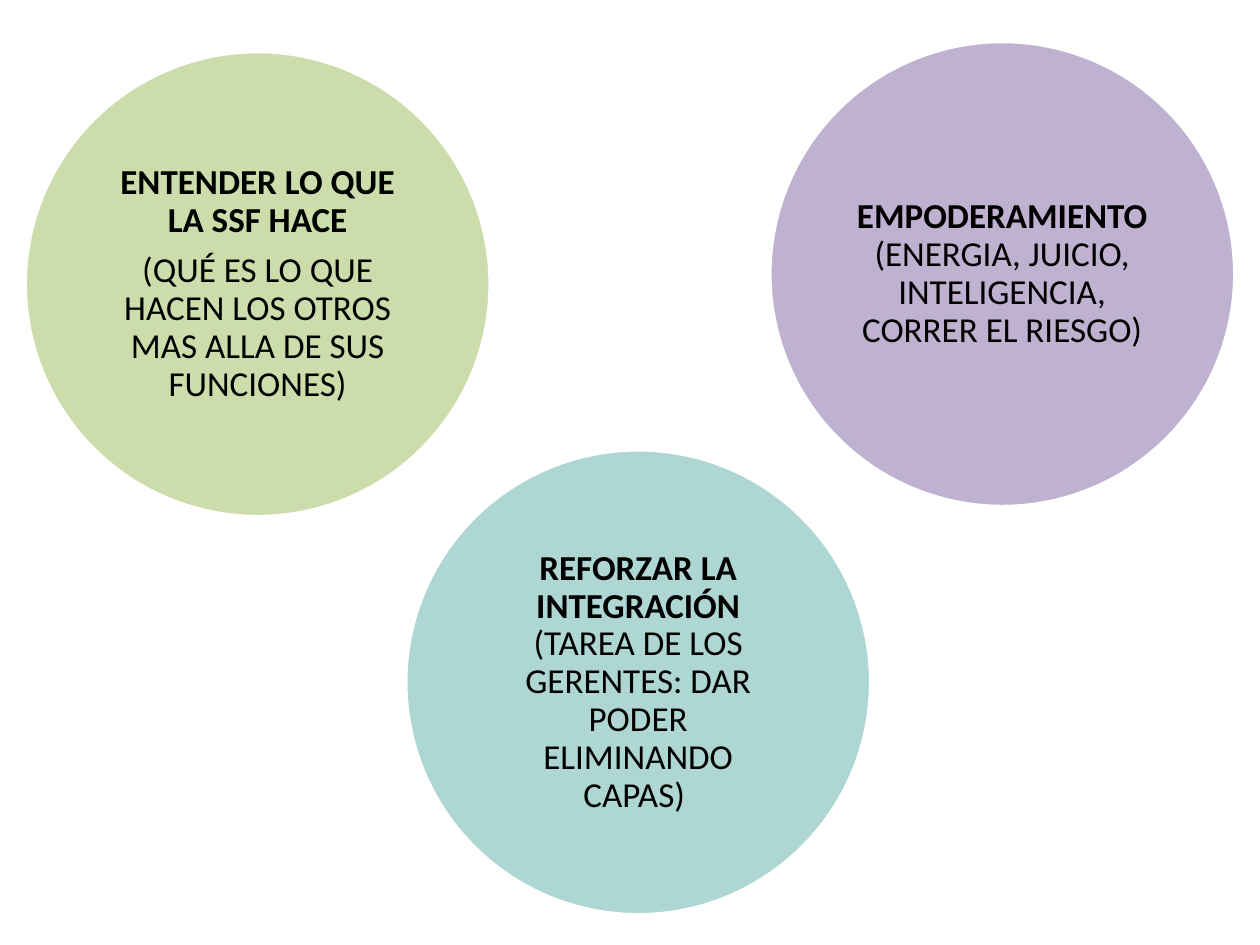
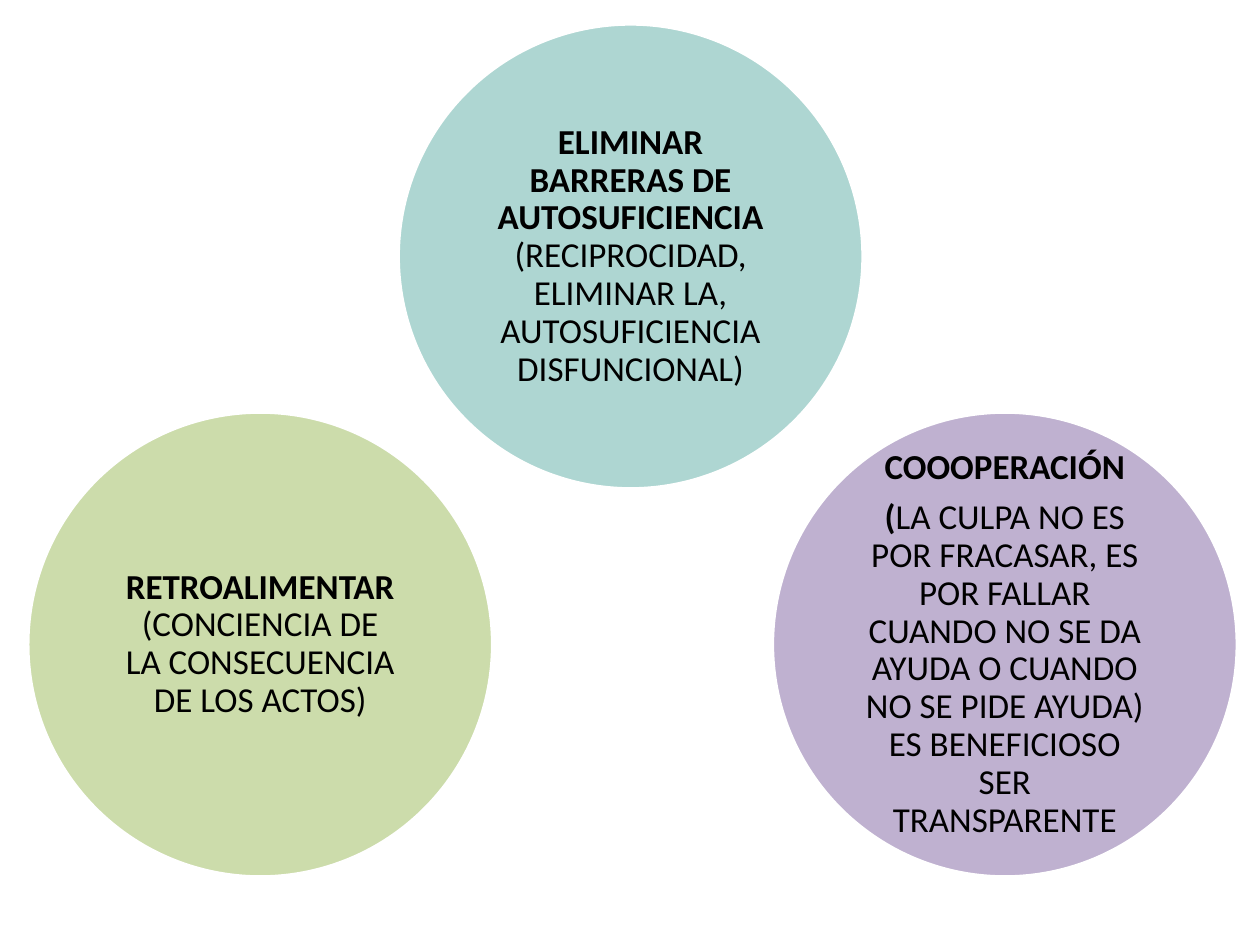
from lxml.etree import SubElement
from pptx import Presentation
from pptx.dml.color import RGBColor
from pptx.enum.shapes import MSO_SHAPE as Shape
from pptx.enum.text import MSO_ANCHOR as Anchor, PP_ALIGN as Align
from pptx.oxml.ns import qn
from pptx.util import Pt

PX = 9144
DIAMETER = 369
COLORS = {
    "green": "9BBB59",
    "teal": "5EAFA6",
    "purple": "8064A2",
    "outline": "FFFFFF",
    "text": "000000",
}


class Deck:
    """Holds the shared circle style and the slide being filled."""

    font, size = "Calibri", Pt(20)

    def __init__(self, width, height):
        self.prs = Presentation()
        self.prs.slide_width, self.prs.slide_height = width * PX, height * PX
        self.slide = None

    def color(self, key):
        return RGBColor.from_string(COLORS[key])

    def new_slide(self):
        self.slide = self.prs.slides.add_slide(self.prs.slide_layouts[6])

    def circle(self, left, top, color, paragraphs, inset=20):
        disc = self.slide.shapes.add_shape(
            Shape.OVAL, left * PX, top * PX, DIAMETER * PX, DIAMETER * PX)
        disc.shadow.inherit = False
        disc.fill.solid()
        disc.fill.fore_color.rgb = self.color(color)
        tint = disc.element.spPr.find(qn("a:solidFill"))[0]
        SubElement(tint, qn("a:alpha"), val="50000")
        disc.line.color.rgb = self.color("outline")
        disc.line.width = Pt(2)

        frame = disc.text_frame
        frame.word_wrap = True
        frame.vertical_anchor = Anchor.MIDDLE
        frame.margin_left = frame.margin_right = inset * PX
        frame.margin_top = frame.margin_bottom = 3 * PX
        for index, runs in enumerate(paragraphs):
            paragraph = frame.add_paragraph() if index else frame.paragraphs[0]
            self.fill_paragraph(paragraph, runs)

    def fill_paragraph(self, paragraph, runs):
        paragraph.alignment = Align.CENTER
        paragraph.line_spacing = 0.9
        paragraph.space_after = Pt(7)
        paragraph.font.name = self.font
        paragraph.font.size = self.size
        paragraph.font.color.rgb = self.color("text")
        for words, is_bold in runs:
            run = paragraph.add_run()
            run.text = words
            run.font.bold = is_bold

    def save(self):
        self.prs.save("out.pptx")


def bold(words):
    return words, True


def plain(words):
    return words, False


def main():
    deck = Deck(1000, 750)

    deck.new_slide()
    deck.circle(20, 41, "green", [
        [bold("ENTENDER LO QUE LA SSF HACE")],
        [plain("(QUÉ ES LO QUE HACEN LOS OTROS MAS ALLA DE SUS FUNCIONES)")],
    ])
    deck.circle(322, 357, "teal", [[
        bold("REFORZAR LA INTEGRACIÓN "),
        plain("(TAREA DE LOS GERENTES: DAR PODER ELIMINANDO CAPAS) "),
    ]])
    deck.circle(611, 33, "purple", [[
        bold("EMPODERAMIENTO"),
        plain(" (ENERGIA, JUICIO, INTELIGENCIA, CORRER EL RIESGO)"),
    ]], inset=8)

    deck.new_slide()
    deck.circle(22, 327, "green", [[
        bold("RETROALIMENTAR"),
        plain(" (CONCIENCIA DE LA CONSECUENCIA DE LOS ACTOS)"),
    ]])
    deck.circle(316, 19, "teal", [[
        bold("ELIMINAR BARRERAS DE AUTOSUFICIENCIA "),
        plain("(RECIPROCIDAD, ELIMINAR LA, AUTOSUFICIENCIA DISFUNCIONAL)"),
    ]])
    deck.circle(613, 327, "purple", [
        [bold("COOOPERACIÓN")],
        [bold("("),
         plain("LA CULPA NO ES POR FRACASAR, ES POR FALLAR CUANDO NO SE DA "
               "AYUDA O CUANDO NO SE PIDE AYUDA) ES BENEFICIOSO SER "
               "TRANSPARENTE")],
    ])

    deck.save()


if __name__ == "__main__":
    main()
